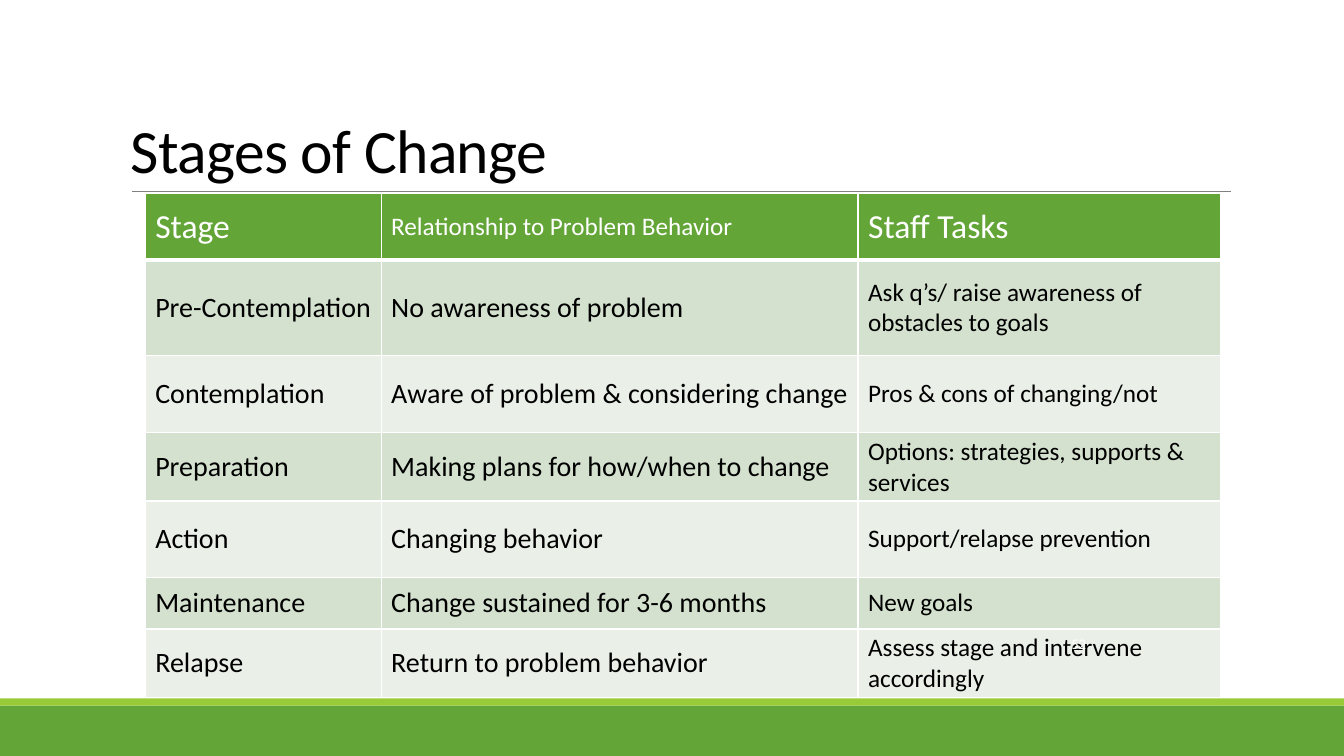
"""Build the Stages of Change slide."""
import pptx
import pptx.dml.color
import pptx.enum.shapes
import pptx.enum.text
import pptx.oxml.ns
import pptx.util
from lxml import etree

RGBColor = pptx.dml.color.RGBColor
Inches = pptx.util.Inches
Pt = pptx.util.Pt
ALIGN = pptx.enum.text.PP_ALIGN
ANCHOR = pptx.enum.text.MSO_ANCHOR
qn = pptx.oxml.ns.qn

GREEN = RGBColor(0x63, 0xA5, 0x37)
LIME = RGBColor(0x99, 0xCB, 0x38)
GREY = RGBColor(0x80, 0x80, 0x80)
BLACK = RGBColor(0, 0, 0)
WHITE = RGBColor(0xFF, 0xFF, 0xFF)
BANDS = [RGBColor(0xD3, 0xE1, 0xCE), RGBColor(0xEA, 0xF0, 0xE8)]

WIDTH, HEIGHT = 13.33, 7.5
COLS = [2.34, 4.73, 3.6]
ROWS = [0.66, 0.95, 0.76, 0.68, 0.76, 0.51, 0.66]
HEADER_SIZES = [24, 18, 24]
BODY_SIZES = [20, 20, 18]
STAGES = [
    ("Stage", "Relationship to Problem Behavior", "Staff Tasks"),
    ("Pre-Contemplation", "No awareness of problem",
     "Ask q’s/ raise awareness of obstacles to goals"),
    ("Contemplation", "Aware of problem & considering change",
     "Pros & cons of changing/not"),
    ("Preparation", "Making plans for how/when to change",
     "Options: strategies, supports & services"),
    ("Action", "Changing behavior", "Support/relapse prevention"),
    ("Maintenance", "Change sustained for 3-6 months", "New goals"),
    ("Relapse", "Return to problem behavior",
     "Assess stage and intervene accordingly"),
]


def write(tf, text, size, color, align=ALIGN.LEFT, line_spacing=None, tracking=None):
    """Put one formatted run of text in a text frame."""
    tf.word_wrap = True
    p = tf.paragraphs[0]
    p.alignment = align
    if line_spacing:
        p.line_spacing = line_spacing
    r = p.add_run()
    r.text = text
    r.font.name = "Calibri"
    r.font.size = Pt(size)
    r.font.bold = False
    r.font.color.rgb = color
    if tracking:
        r.font._element.set("spc", str(int(tracking * 100)))


def add_text(s, box, text, anchor, **fmt):
    """Add a text box with the given anchor and text format."""
    tf = s.shapes.add_textbox(*map(Inches, box)).text_frame
    tf.vertical_anchor = anchor
    write(tf, text, **fmt)


def add_band(s, top, height, color):
    """Add a plain band across the whole slide."""
    sp = s.shapes.add_shape(pptx.enum.shapes.MSO_SHAPE.RECTANGLE, 0, Inches(top),
                            Inches(WIDTH), Inches(height))
    sp.shadow.inherit = False
    sp.fill.solid()
    sp.fill.fore_color.rgb = color
    sp.line.fill.background()


def add_rule(s, left, right, y):
    """Add the thin horizontal rule under the title."""
    line = s.shapes.add_connector(pptx.enum.shapes.MSO_CONNECTOR.STRAIGHT,
                                  *map(Inches, (left, y, right, y)))
    line.line.color.rgb = GREY
    line.line.width = Pt(0.5)
    etree.SubElement(line._element.spPr, qn("a:effectLst"))


def style_cell(cell, fill, bottom):
    """Set a cell's white borders, fill, margins and anchor."""
    tc_pr = cell._tc.get_or_add_tcPr()
    for side, width in zip("LRTB", (1, 1, 1, bottom)):
        ln = etree.SubElement(tc_pr, qn("a:ln" + side), w=str(Pt(width)))
        solid = etree.SubElement(ln, qn("a:solidFill"))
        etree.SubElement(solid, qn("a:srgbClr"), val=str(WHITE))
    cell.fill.solid()
    cell.fill.fore_color.rgb = fill
    cell.vertical_anchor = ANCHOR.MIDDLE
    cell.margin_left = cell.margin_right = Inches(0.1)
    cell.margin_top = cell.margin_bottom = Inches(0.04)


def add_stage_table(s, left, top):
    """Add the banded table of stages."""
    box = map(Inches, (left, top, sum(COLS), sum(ROWS)))
    table = s.shapes.add_table(len(ROWS), len(COLS), *box).table
    for col, width in zip(table.columns, COLS):
        col.width = Inches(width)
    for i, (row, height) in enumerate(zip(table.rows, ROWS)):
        row.height = Inches(height)
        header = i == 0
        fill = GREEN if header else BANDS[(i - 1) % 2]
        sizes = HEADER_SIZES if header else BODY_SIZES
        for cell, text, size in zip(row.cells, STAGES[i], sizes):
            style_cell(cell, fill, bottom=3 if header else 1)
            write(cell.text_frame, text, size, WHITE if header else BLACK)


def main():
    """Build and save the slide."""
    prs = pptx.Presentation()
    prs.slide_width, prs.slide_height = Inches(WIDTH), Inches(HEIGHT)
    s = prs.slides.add_slide(prs.slide_layouts[6])
    add_band(s, 7, 0.5, GREEN)
    add_band(s, 6.93, 0.07, LIME)
    add_rule(s, 1.31, 12.21, 1.9)
    add_text(s, (1.2, 0.31, 11, 1.59), "Stages of Change", ANCHOR.BOTTOM,
             size=44, color=BLACK, line_spacing=0.85, tracking=-0.5)
    add_stage_table(s, 1.44, 1.92)
    add_text(s, (9.79, 6.24, 1.08, 0.3), "52", ANCHOR.MIDDLE,
             size=10.5, color=WHITE, align=ALIGN.RIGHT)
    prs.save("out.pptx")


if __name__ == "__main__":
    main()
